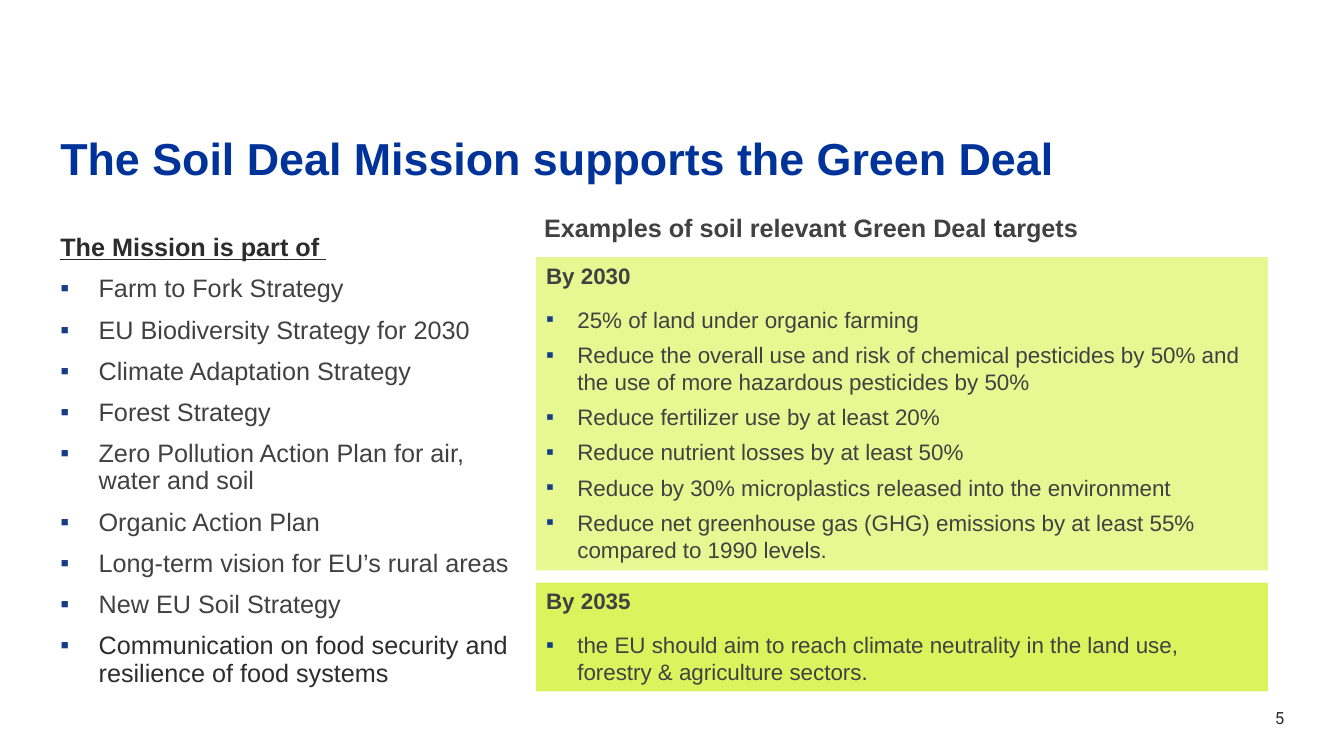
from dataclasses import dataclass

from lxml.etree import SubElement
from pptx import Presentation
from pptx.dml.color import RGBColor
from pptx.enum.shapes import MSO_SHAPE
from pptx.enum.text import MSO_ANCHOR, PP_ALIGN
from pptx.oxml.ns import qn
from pptx.util import Inches, Pt

COLS, ROWS = 40, 30
INK, GREY, NAVY, BULLET = "2C2C2C", "414141", "003399", "143C87"


@dataclass(frozen=True)
class Run:
    text: str
    color: str = GREY
    bold: bool = False
    underline: bool = False


@dataclass(frozen=True)
class Para:
    runs: tuple[Run, ...]
    indent: float = 0
    before: float = 0
    after: float = 0
    line: float = 1


@dataclass(frozen=True)
class Block:
    """Text in a box whose place is given in grid columns and rows."""
    col: float
    row: float
    cols: float
    rows: float
    size: float
    paras: tuple[Para, ...]
    fill: str = ""
    font: str = "Arial"


def rgb(color: str) -> RGBColor:
    return RGBColor.from_string(color)


def strategy(text: str, color: str = GREY) -> Para:
    return Para((Run(text, color),), indent=0.38, before=10, line=0.9)


def target(text: str, after: float = 6) -> Para:
    return Para((Run(text),), indent=0.31, after=after)


def heading(*runs: Run) -> Para:
    return Para(runs, after=12)


def add_bullet(p, indent: float) -> None:
    pPr = p._p.get_or_add_pPr()
    pPr.set("marL", str(Inches(indent)))
    pPr.set("indent", str(-Inches(indent)))
    color = SubElement(pPr, qn("a:buClr"))
    SubElement(color, qn("a:srgbClr"), val=BULLET)
    SubElement(pPr, qn("a:buFont"), typeface="Arial")
    SubElement(pPr, qn("a:buChar"), char="▪")


def write_para(p, para: Para, size: float, font: str) -> None:
    if para.indent:
        add_bullet(p, para.indent)
    p.alignment = PP_ALIGN.LEFT
    p.line_spacing = para.line
    p.space_before, p.space_after = Pt(para.before), Pt(para.after)
    for run in para.runs:
        r = p.add_run()
        r.text = run.text
        r.font.name, r.font.size = font, Pt(size)
        r.font.bold, r.font.underline = run.bold, run.underline
        r.font.color.rgb = rgb(run.color)


def add_block(prs, s, block: Block) -> None:
    dx, dy = prs.slide_width / COLS, prs.slide_height / ROWS
    place = [round(v) for v in (block.col * dx, block.row * dy,
                                block.cols * dx, block.rows * dy)]
    if block.fill:
        sp = s.shapes.add_shape(MSO_SHAPE.RECTANGLE, *place)
        sp.shadow.inherit = False
        sp.fill.solid()
        sp.fill.fore_color.rgb = rgb(block.fill)
        sp.line.fill.background()
    else:
        sp = s.shapes.add_textbox(*place)
    tf = sp.text_frame
    tf.word_wrap = True
    tf.vertical_anchor = MSO_ANCHOR.TOP
    for i, para in enumerate(block.paras):
        p = tf.add_paragraph() if i else tf.paragraphs[0]
        write_para(p, para, block.size, block.font)


PAGE_NUMBER = Block(37.65, 27.88, 2, 1.6, 12, (Para((Run("5", INK),)),), font="Roboto")

STRATEGIES = Block(1.5, 9, 14.28, 18.84, 18, (
    Para((Run("The Mission is part of ", INK, bold=True, underline=True),)),
    strategy("Farm to Fork Strategy"),
    strategy("EU Biodiversity Strategy for 2030"),
    strategy("Climate Adaptation Strategy"),
    strategy("Forest Strategy"),
    strategy("Zero Pollution Action Plan for air, water and soil"),
    strategy("Organic Action Plan"),
    strategy("Long-term vision for EU’s rural areas"),
    strategy("New EU Soil Strategy"),
    strategy("Communication on food security and resilience of food systems", INK),
))

TARGETS_2030 = Block(15.96, 10.2, 21.78, 12.44, 16, (
    heading(Run("By 2030", bold=True)),
    target("25% of land under organic farming"),
    target("Reduce the overall use and risk of chemical pesticides by 50% "
           "and the use of more hazardous pesticides by 50%"),
    target("Reduce fertilizer use by at least 20%"),
    target("Reduce nutrient losses by at least 50%"),
    target("Reduce by 30% microplastics released into the environment"),
    target("Reduce net greenhouse gas (GHG) emissions by at least 55% "
           "compared to 1990 levels."),
), fill="E7F893")

TARGETS_2035 = Block(15.96, 23.12, 21.78, 4.32, 16, (
    heading(Run("By 2035", bold=True)),
    target("the EU should aim to reach climate neutrality in the land use, "
           "forestry & agriculture sectors.", after=12),
), fill="DBF45E")

TARGETS_HEADING = Block(15.9, 8.24, 21.93, 1.6, 18, (
    heading(Run("Examples of soil relevant Green Deal ", bold=True),
            Run("t", INK, bold=True), Run("argets", bold=True)),
))

TITLE = Block(1.5, 5.24, 36.24, 3.84, 32, (
    Para((Run("The Soil Deal Mission supports the Green Deal", NAVY, bold=True),), line=0.9),
))


def main() -> None:
    prs = Presentation()
    prs.slide_width, prs.slide_height = Inches(13.33), Inches(7.5)
    s = prs.slides.add_slide(prs.slide_layouts[6])
    for block in (PAGE_NUMBER, STRATEGIES, TARGETS_2030, TARGETS_2035,
                  TARGETS_HEADING, TITLE):
        add_block(prs, s, block)
    prs.save("out.pptx")


if __name__ == "__main__":
    main()
